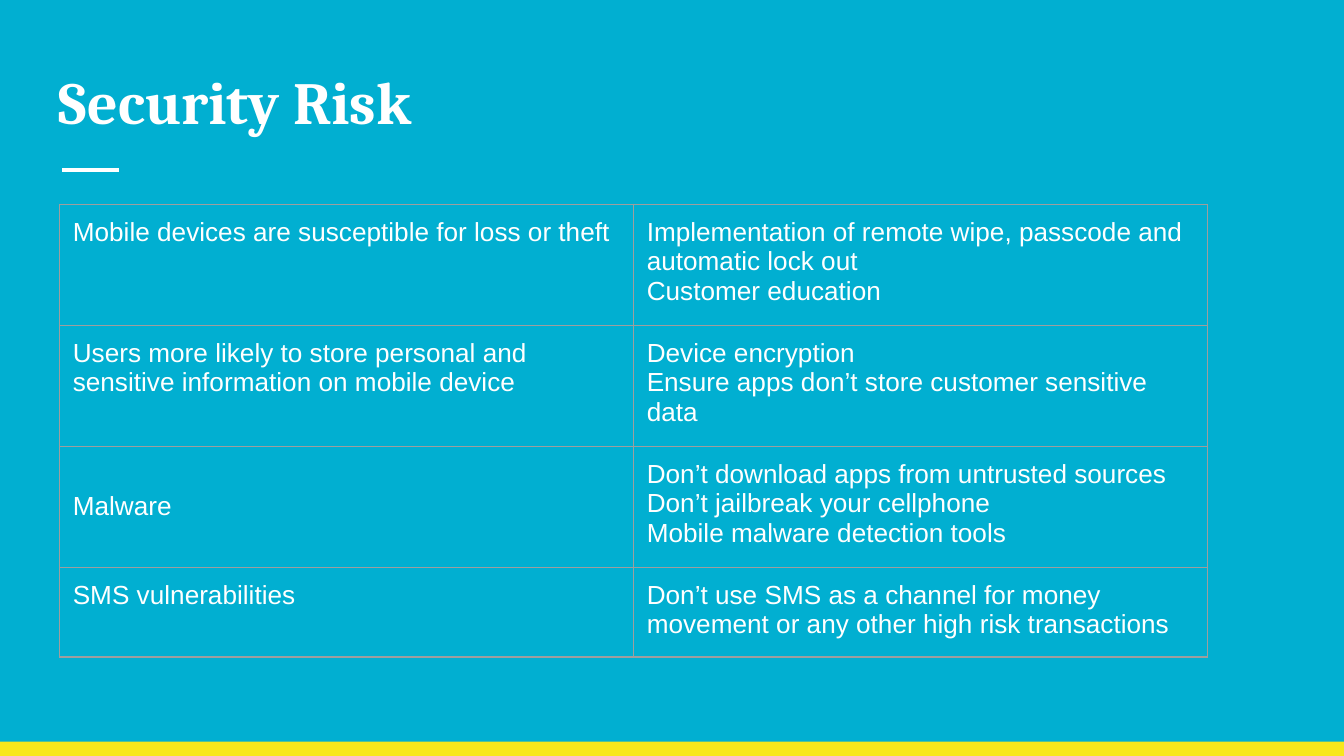
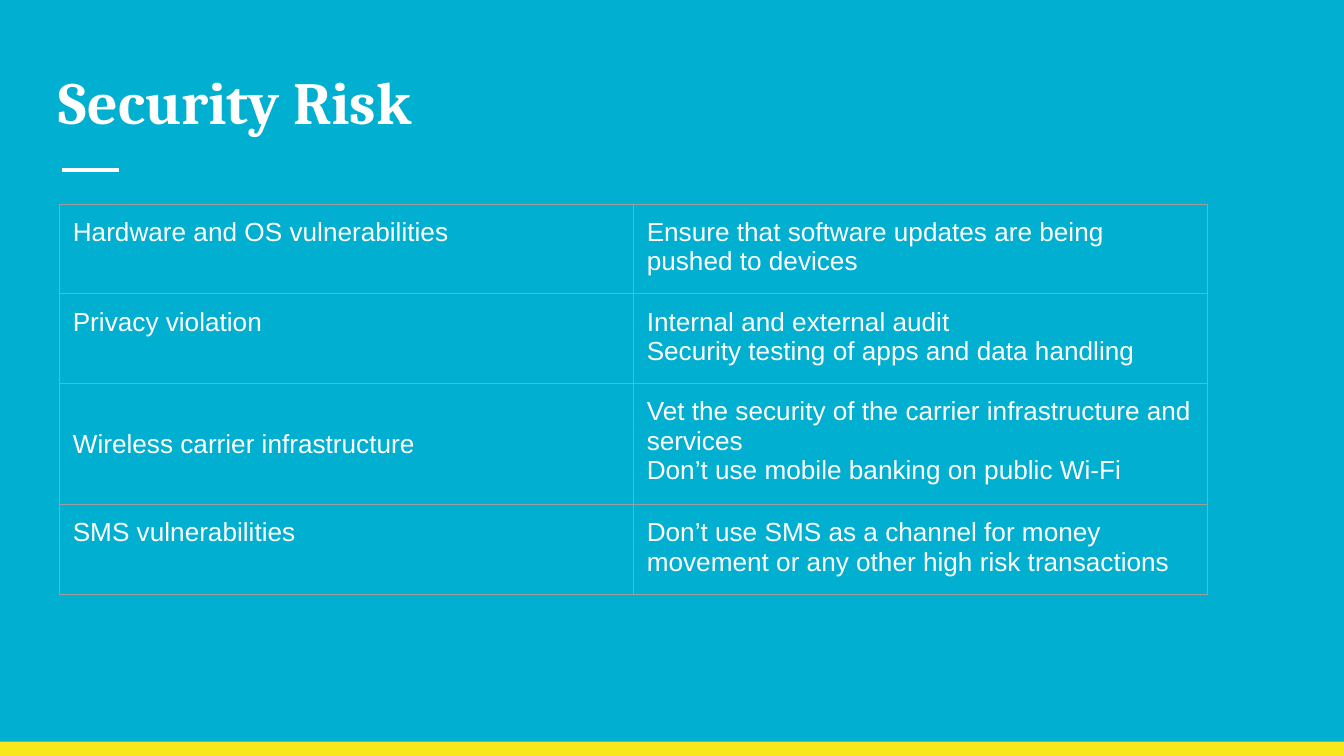
import pptx
import pptx.dml.color
import pptx.enum.shapes
import pptx.enum.text
import pptx.oxml.ns
import pptx.util
import lxml.etree

Pt = pptx.util.Pt
SLIDE_WIDTH, SLIDE_HEIGHT = 720, 405
COLORS = {
    "background": "01AFD1",
    "band": "F8E71C",
    "text": "FFFFFF",
    "border": "9E9E9E",
}
TITLE_FONT, BODY_FONT = "Cambria", "Arial"
INSET = 7.2
ROW_HEIGHT = 30
BORDER_WIDTH = 0.75

TITLE_BOX = (24.5, 29.5, 671, 51)
RULE_BOX = (33.3, 90.9, 30.2, 0)
BAND_BOX = (0, 397.4, SLIDE_WIDTH, 7.6)
TABLE_BOX = (31.8, 109.4, 615)

SMS_RISK = (
    "SMS vulnerabilities",
    ["Don’t use SMS as a channel for money movement or any other high risk transactions"],
)
DEVICE_RISKS = [
    (
        "Mobile devices are susceptible for loss or theft",
        ["Implementation of remote wipe, passcode and automatic lock out", "Customer education"],
    ),
    (
        "Users more likely to store personal and sensitive information on mobile device",
        ["Device encryption", "Ensure apps don’t store customer sensitive data"],
    ),
    (
        "Malware",
        [
            "Don’t download apps from untrusted sources",
            "Don’t jailbreak your cellphone",
            "Mobile malware detection tools",
        ],
    ),
    SMS_RISK,
]
PLATFORM_RISKS = [
    (
        "Hardware and OS vulnerabilities",
        ["Ensure that software updates are being pushed to devices"],
    ),
    (
        "Privacy violation",
        ["Internal and external audit", "Security testing of apps and data handling"],
    ),
    (
        "Wireless carrier infrastructure",
        [
            "Vet the security of the carrier infrastructure and services",
            "Don’t use mobile banking on public Wi-Fi",
        ],
    ),
    SMS_RISK,
]
CENTERED_RISKS = {"Malware", "Wireless carrier infrastructure"}


def color(name):
    return pptx.dml.color.RGBColor.from_string(COLORS[name])


def set_insets(holder):
    holder.margin_left = holder.margin_right = Pt(INSET)
    holder.margin_top = holder.margin_bottom = Pt(INSET)


def write_lines(frame, lines, font_name, size, bold=False):
    frame.word_wrap = True
    for index, line in enumerate(lines):
        paragraph = frame.paragraphs[0] if index == 0 else frame.add_paragraph()
        paragraph.text = line
        paragraph.font.name = font_name
        paragraph.font.size = Pt(size)
        paragraph.font.bold = bold
        paragraph.font.color.rgb = color("text")


def add_band(slide, box):
    band = slide.shapes.add_shape(
        pptx.enum.shapes.MSO_SHAPE.RECTANGLE, *map(Pt, box)
    )
    band.shadow.inherit = False
    band.fill.solid()
    band.fill.fore_color.rgb = color("band")
    band.line.fill.background()


def add_rule(slide, box):
    left, top, width, height = box
    rule = slide.shapes.add_connector(
        pptx.enum.shapes.MSO_CONNECTOR.STRAIGHT,
        Pt(left), Pt(top), Pt(left + width), Pt(top + height),
    )
    rule.line.color.rgb = color("text")
    rule.line.width = Pt(2.25)
    lxml.etree.SubElement(
        rule._element.spPr, pptx.oxml.ns.qn("a:effectLst")
    )


def add_title(slide, box, title):
    frame = slide.shapes.add_textbox(*map(Pt, box)).text_frame
    set_insets(frame)
    frame.vertical_anchor = pptx.enum.text.MSO_ANCHOR.BOTTOM
    write_lines(frame, [title], TITLE_FONT, 32, bold=True)


def add_borders(cell):
    qn = pptx.oxml.ns.qn
    properties = cell._tc.get_or_add_tcPr()
    for index, side in enumerate(("a:lnL", "a:lnR", "a:lnT", "a:lnB")):
        border = lxml.etree.Element(qn(side), w=str(Pt(BORDER_WIDTH)))
        fill = lxml.etree.SubElement(border, qn("a:solidFill"))
        lxml.etree.SubElement(fill, qn("a:srgbClr"), val=COLORS["border"])
        properties.insert(index, border)


def add_risk_table(slide, box, risks):
    left, top, width = box
    table = slide.shapes.add_table(
        len(risks), 2, Pt(left), Pt(top), Pt(width), Pt(ROW_HEIGHT * len(risks))
    ).table
    table.first_row = False
    table.horz_banding = False
    for row, (risk, measures) in enumerate(risks):
        for column, lines in enumerate(([risk], measures)):
            cell = table.cell(row, column)
            set_insets(cell)
            cell.fill.background()
            write_lines(cell.text_frame, lines, BODY_FONT, 14)
            add_borders(cell)
        if risk in CENTERED_RISKS:
            table.cell(row, 0).vertical_anchor = pptx.enum.text.MSO_ANCHOR.MIDDLE


def add_risk_slide(presentation, title, risks):
    slide = presentation.slides.add_slide(presentation.slide_layouts[6])
    slide.background.fill.solid()
    slide.background.fill.fore_color.rgb = color("background")
    add_band(slide, BAND_BOX)
    add_rule(slide, RULE_BOX)
    add_title(slide, TITLE_BOX, title)
    add_risk_table(slide, TABLE_BOX, risks)


def main():
    presentation = pptx.Presentation()
    presentation.slide_width = Pt(SLIDE_WIDTH)
    presentation.slide_height = Pt(SLIDE_HEIGHT)
    for risks in (DEVICE_RISKS, PLATFORM_RISKS):
        add_risk_slide(presentation, "Security Risk", risks)
    presentation.save("out.pptx")


if __name__ == "__main__":
    main()
